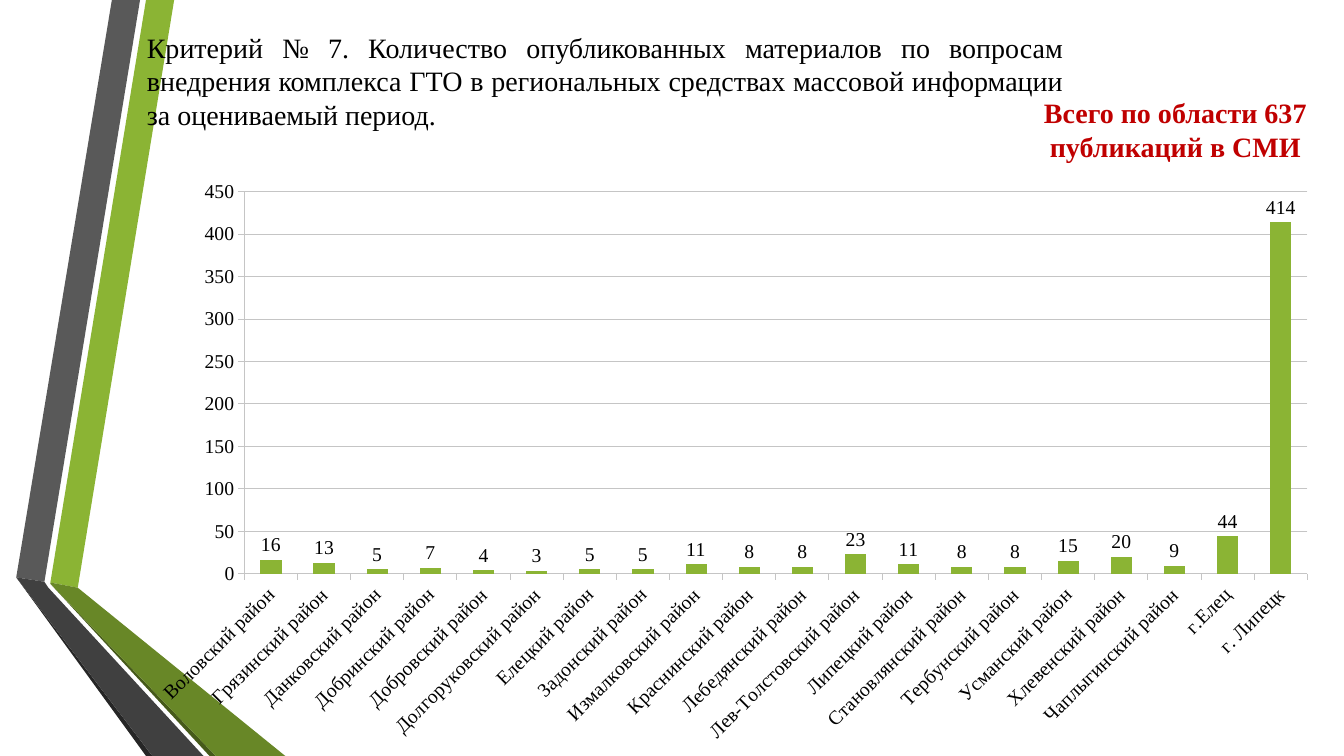
from lxml.etree import SubElement
from pptx import Presentation
from pptx.chart.data import CategoryChartData
from pptx.dml.color import RGBColor
from pptx.enum.chart import XL_CHART_TYPE, XL_LABEL_POSITION, XL_TICK_MARK
from pptx.enum.text import MSO_AUTO_SIZE, PP_ALIGN
from pptx.oxml import parse_xml
from pptx.oxml.ns import nsdecls, qn
from pptx.util import Cm, Pt

FONT = "Times New Roman"
GREEN = "8BB434"
GREY = "C5C5C5"


def color(code):
    return RGBColor.from_string(code)


def style_font(font, size, code, bold=False):
    font.name = FONT
    font.size = Pt(size)
    font.bold = bold
    font.color.rgb = color(code)


deck = Presentation()
deck.slide_width = Cm(33.87)
deck.slide_height = Cm(19.05)
page = deck.slides.add_slide(deck.slide_layouts[6])

ribbons = [
    (GREEN, [(1.27, 14.68), (1.96, 14.81), (4.39, 0), (3.68, 0)]),
    ("595959", [(3.53, 0), (2.82, 0), (0.41, 14.55), (1.12, 14.66)]),
    ("262626", [(0.41, 14.55), (3.68, 19.05), (3.84, 19.05)]),
    ("465A1A", [(1.27, 14.71), (5.28, 19.05), (5.44, 19.05)]),
    ("688727", [(1.27, 14.71), (5.44, 19.05), (7.19, 19.05), (1.96, 14.81), (1.27, 14.68)]),
    ("404040", [(5.13, 19.05), (1.22, 14.81), (1.12, 14.66), (0.41, 14.55), (3.84, 19.05)]),
]
for fill, corners in ribbons:
    points = [(Cm(x), Cm(y)) for x, y in corners]
    builder = page.shapes.build_freeform(*points[0])
    builder.add_line_segments(points[1:], close=True)
    ribbon = builder.convert_to_shape()
    ribbon.shadow.inherit = False
    ribbon.fill.solid()
    ribbon.fill.fore_color.rgb = color(fill)
    ribbon.line.fill.background()

publications = {
    "Воловский район": 16,
    "Грязинский район": 13,
    "Данковский район": 5,
    "Добринский район": 7,
    "Добровский район": 4,
    "Долгоруковский район": 3,
    "Елецкий район": 5,
    "Задонский район": 5,
    "Измалковский район": 11,
    "Краснинский район": 8,
    "Лебедянский район": 8,
    "Лев-Толстовский район": 23,
    "Липецкий район": 11,
    "Становлянский район": 8,
    "Тербунский район": 8,
    "Усманский район": 15,
    "Хлевенский район": 20,
    "Чаплыгинский район": 9,
    "г.Елец": 44,
    "г. Липецк": 414,
}
data = CategoryChartData(number_format="0")
data.categories = list(publications)
data.add_series("Series 1", list(publications.values()))
chart = page.shapes.add_chart(
    XL_CHART_TYPE.COLUMN_CLUSTERED, Cm(3.45), Cm(4.24), Cm(30.1), Cm(14.81), data
).chart
chart.has_legend = False
chart.has_title = False
style_font(chart.font, 14, "000000")

for axis in (chart.category_axis, chart.value_axis):
    axis.major_tick_mark = XL_TICK_MARK.OUTSIDE
    axis.minor_tick_mark = XL_TICK_MARK.NONE
    axis.format.line.color.rgb = color(GREY)
    axis.format.line.width = Pt(0.75)
    style_font(axis.tick_labels.font, 14, "000000")
label_body = chart.category_axis._element.find(qn("c:txPr")).find(qn("a:bodyPr"))
label_body.set("rot", "-2700000")
label_body.set("vert", "horz")

values = chart.value_axis
values.minimum_scale = 0
values.maximum_scale = 450
values.major_unit = 50
values.tick_labels.number_format = "0"
values.tick_labels.number_format_is_linked = False
values.has_major_gridlines = True
values.major_gridlines.format.line.color.rgb = color(GREY)
values.major_gridlines.format.line.width = Pt(0.75)

plot = chart.plots[0]
plot.gap_width = 150
plot.vary_by_categories = False
columns = plot.series[0].format.fill
columns.solid()
columns.fore_color.rgb = color(GREEN)
plot.has_data_labels = True
labels = plot.data_labels
labels.show_value = True
labels.position = XL_LABEL_POSITION.OUTSIDE_END
labels.number_format = "0"
labels.number_format_is_linked = False
style_font(labels.font, 14, "000000")

plot_area = chart._chartSpace.chart.plotArea
for old_layout in plot_area.findall(qn("c:layout")):
    plot_area.remove(old_layout)
layout = parse_xml(f"<c:layout {nsdecls('c')}><c:manualLayout/></c:layout>")
settings = [("layoutTarget", "inner"), ("xMode", "edge"), ("yMode", "edge"),
            ("x", "0.09"), ("y", "0.04"), ("w", "0.89"), ("h", "0.65")]
for name, value in settings:
    SubElement(layout[0], qn(f"c:{name}")).set("val", value)
plot_area.insert(0, layout)

captions = [
    ("Критерий № 7. Количество опубликованных материалов по вопросам внедрения комплекса ГТО "
     "в региональных средствах массовой информации за оцениваемый период.",
     (3.45, 0.64, 23.6, 2.82), PP_ALIGN.JUSTIFY, "000000", False),
    ("Всего по области 637 публикаций в СМИ",
     (25.96, 2.29, 7.32, 1.96), PP_ALIGN.CENTER, "C00000", True),
]
for text, place, alignment, code, bold in captions:
    box = page.shapes.add_textbox(*[Cm(length) for length in place])
    box.text_frame.word_wrap = True
    box.text_frame.auto_size = MSO_AUTO_SIZE.SHAPE_TO_FIT_TEXT
    para = box.text_frame.paragraphs[0]
    para.alignment = alignment
    span = para.add_run()
    span.text = text
    style_font(span.font, 20, code, bold)

deck.save("out.pptx")
